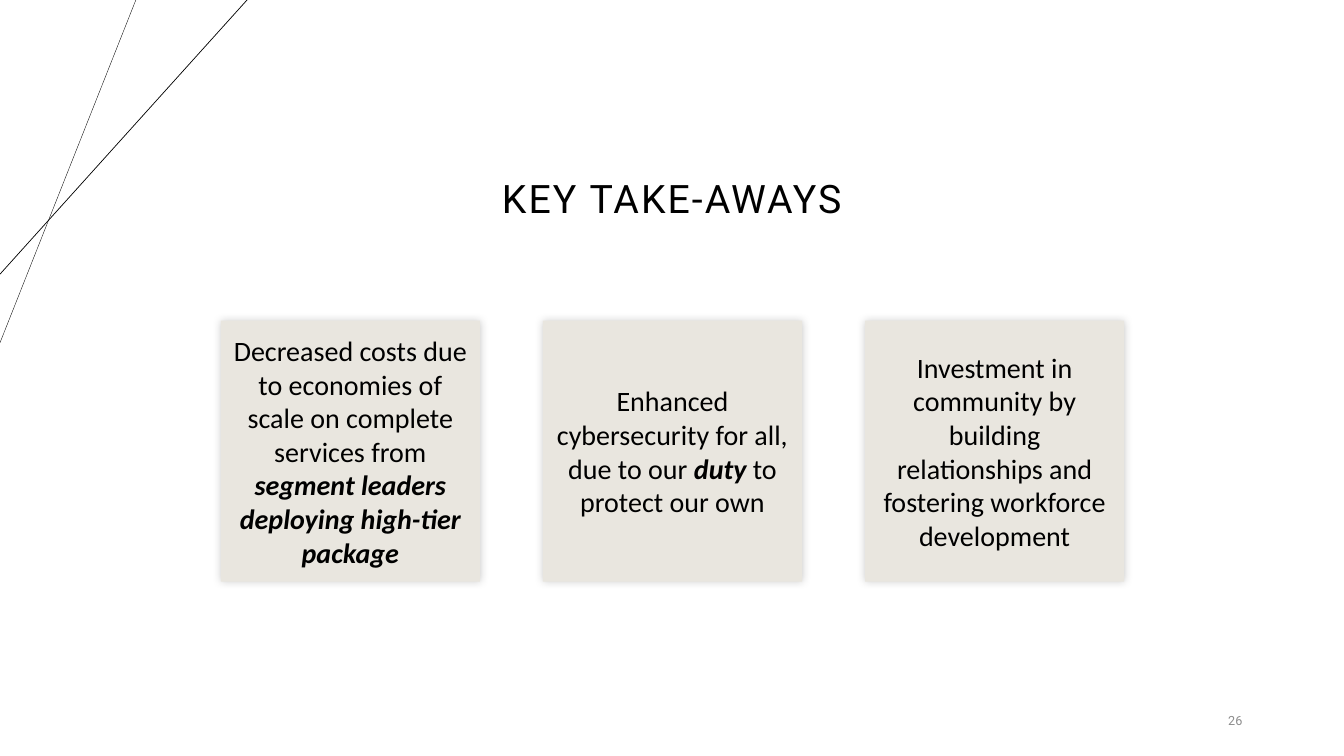
from lxml import etree
from pptx import Presentation
from pptx.dml.color import RGBColor
from pptx.enum.shapes import MSO_CONNECTOR, MSO_SHAPE
from pptx.enum.text import MSO_ANCHOR, PP_ALIGN
from pptx.oxml.ns import qn
from pptx.util import Inches, Pt

LINE = MSO_CONNECTOR.STRAIGHT
RECT = MSO_SHAPE.RECTANGLE
MIDDLE = MSO_ANCHOR.MIDDLE
CENTER = PP_ALIGN.CENTER
RIGHT = PP_ALIGN.RIGHT

COLORS = {"ink": "000000", "card": "E9E6DF", "muted": "8C8C8C"}

CARDS = [
    [("Decreased costs due to economies of scale on complete services from ", False),
     ("segment leaders deploying high-tier package", True)],
    [("Enhanced cybersecurity for all, due to our ", False),
     ("duty ", True),
     ("to protect our own", False)],
    [("Investment in community by building relationships and "
      "fostering workforce development", False)],
]


def color(name):
    return RGBColor.from_string(COLORS[name])


def style(para, font, size, tint, align):
    para.alignment = align
    para.font.name = font
    para.font.size = Pt(size)
    para.font.color.rgb = color(tint)


def place(shape, box):
    shape.left, shape.top, shape.width, shape.height = map(Inches, box)


def add_rays(slide, box):
    left, top, width, height = box
    for across, down, weight in [(0.55, 1, 0.25), (1, 0.8, 0.5)]:
        ray = slide.shapes.add_connector(
            LINE, Inches(left + width * across), Inches(top),
            Inches(left), Inches(top + height * down))
        ray.line.color.rgb = color("ink")
        ray.line.width = Pt(weight)
        etree.SubElement(ray._element.spPr, qn("a:effectLst"))


def add_title(slide, box):
    title = slide.shapes.title
    place(title, box)
    frame = title.text_frame
    frame.text = "KEY TAKE-AWAYS"
    frame.vertical_anchor = MIDDLE
    para = frame.paragraphs[0]
    style(para, "Roboto", 28, "ink", CENTER)
    para.line_spacing = 0.9
    para.runs[0].font._element.set("spc", "150")


def add_number(slide, box):
    frame = slide.shapes.add_textbox(*map(Inches, box)).text_frame
    frame.word_wrap = True
    frame.vertical_anchor = MIDDLE
    frame.text = "26"
    style(frame.paragraphs[0], "Roboto", 9, "muted", RIGHT)


def add_glow(shape):
    shape.shadow.inherit = False
    effects = shape._element.spPr.find(qn("a:effectLst"))
    glow = etree.SubElement(effects, qn("a:outerShdw"), blurRad=str(Pt(6)),
                            dist="0", dir=str(315 * 60000), rotWithShape="0")
    tint = etree.SubElement(glow, qn("a:srgbClr"), val=COLORS["ink"])
    etree.SubElement(tint, qn("a:alpha"), val="20000")


def add_card(slide, box, parts):
    card = slide.shapes.add_shape(RECT, *map(Inches, box))
    card.fill.solid()
    card.fill.fore_color.rgb = color("card")
    card.line.fill.background()
    add_glow(card)
    frame = card.text_frame
    frame.word_wrap = True
    frame.vertical_anchor = MIDDLE
    para = frame.paragraphs[0]
    style(para, "Calibri", 20, "ink", CENTER)
    for text, strong in parts:
        run = para.add_run()
        run.text = text
        if strong:
            run.font.bold = run.font.italic = True


def add_cards(slide, box):
    left, top, width, height = box
    side = 2.57
    step = (width - side) / (len(CARDS) - 1)
    for i, parts in enumerate(CARDS):
        add_card(slide, (left + i * step, top, side, height), parts)


def main():
    deck = Presentation()
    deck.slide_width = Inches(13.33)
    deck.slide_height = Inches(7.5)
    slide = deck.slides.add_slide(deck.slide_layouts[5])
    add_rays(slide, (0, 0, 2.45, 3.4))
    add_title(slide, (2.06, 1.27, 9.21, 1.45))
    add_number(slide, (9.42, 6.95, 3, 0.4))
    add_cards(slide, (2.19, 3.18, 8.96, 2.59))
    deck.save("out.pptx")


if __name__ == "__main__":
    main()
